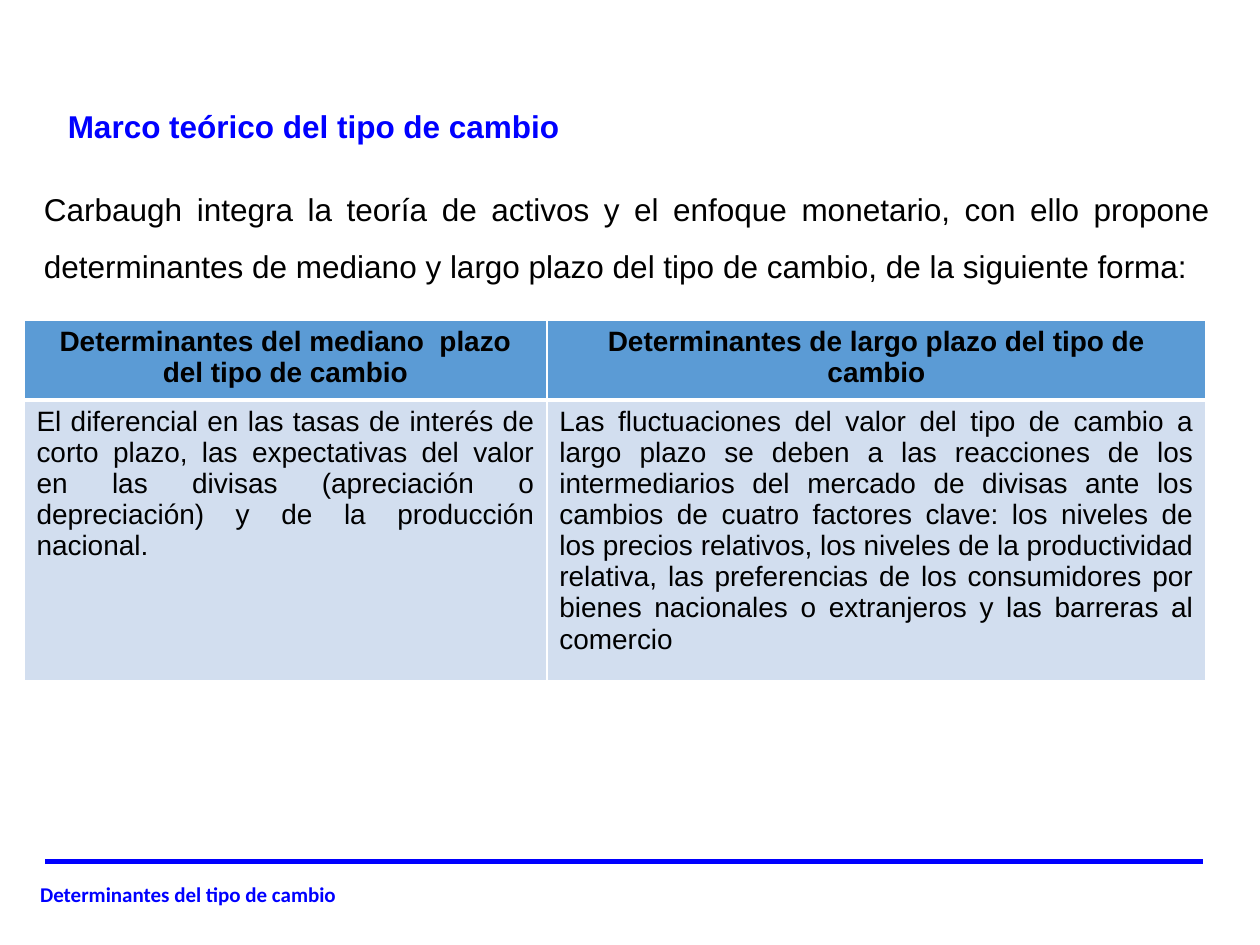
from lxml import etree
from pptx import Presentation
from pptx.dml.color import RGBColor
from pptx.enum.shapes import MSO_CONNECTOR
from pptx.enum.text import PP_ALIGN
from pptx.oxml import parse_xml
from pptx.oxml.ns import nsdecls, qn
from pptx.util import Inches, Pt

LEFT, CENTER, JUST = PP_ALIGN.LEFT, PP_ALIGN.CENTER, PP_ALIGN.JUSTIFY
LINE = MSO_CONNECTOR.STRAIGHT
COLORS = {"blue": "0000FF", "black": "000000", "white": "FFFFFF",
          "head": "5B9BD5", "body": "D2DEEF"}


def write(frame, text, size=18, font="Arial", color="black", bold=False,
          align=LEFT, space=None):
    frame.word_wrap = True
    para = frame.paragraphs[0]
    para.alignment = align
    if space:
        para.line_spacing = space
    run = para.add_run()
    run.text = text
    run.font.size = Pt(size)
    run.font.name = font
    run.font.bold = bold
    run.font.color.rgb = RGBColor.from_string(COLORS[color])


deck = Presentation()
deck.slide_width, deck.slide_height = Inches(10), Inches(7.5)
slide = deck.slides.add_slide(deck.slide_layouts[6])
shapes = slide.shapes

rule = shapes.add_connector(LINE, Inches(0.36), Inches(6.84),
                            Inches(9.55), Inches(6.84))
rule.line.color.rgb = RGBColor.from_string(COLORS["blue"])
rule.line.width = Pt(3)
etree.SubElement(rule._element.spPr, qn("a:effectLst"))

texts = [
    ((0.22, 6.95, 7.14, 0.3), "Determinantes del tipo de cambio",
     dict(size=12, font="Calibri", color="blue", bold=True)),
    ((0.25, 1.31, 9.45, 0.98),
     "Carbaugh integra la teoría de activos y el enfoque monetario, con ello "
     "propone determinantes de mediano y largo plazo del tipo de cambio, de la "
     "siguiente forma:", dict(align=JUST, space=1.5)),
    ((0.44, 0.8, 9.13, 0.4), "Marco teórico del tipo de cambio",
     dict(color="blue", bold=True)),
]
for place, text, style in texts:
    box = shapes.add_textbox(*map(Inches, place))
    write(box.text_frame, text, **style)

rows = [
    ("Determinantes del mediano  plazo del tipo de cambio",
     "Determinantes de largo plazo del tipo de cambio"),
    ("El diferencial en las tasas de interés de corto plazo, las expectativas "
     "del valor en las divisas (apreciación o depreciación) y de la producción "
     "nacional.",
     "Las fluctuaciones del valor del tipo de cambio a largo plazo se deben a "
     "las reacciones de los intermediarios del mercado de divisas ante los "
     "cambios de cuatro factores clave: los niveles de los precios relativos, "
     "los niveles de la productividad relativa, las preferencias de los "
     "consumidores por bienes nacionales o extranjeros y las barreras al "
     "comercio"),
]
looks = [
    ("head", dict(bold=True, align=CENTER), dict(L=1, R=1, T=1, B=3)),
    ("body", dict(align=JUST), dict(L=1, R=1, T=3, B=1)),
]
table = shapes.add_table(2, 2, Inches(0.19), Inches(2.54),
                         Inches(9.38), Inches(2.85)).table
for col, width in zip(table.columns, (4.15, 5.23)):
    col.width = Inches(width)
for row, height in zip(table.rows, (0.62, 2.23)):
    row.height = Inches(height)

for row, texts, (fill, style, edges) in zip(table.rows, rows, looks):
    for cell, text in zip(row.cells, texts):
        write(cell.text_frame, text, size=16, **style)
        cell.fill.solid()
        cell.fill.fore_color.rgb = RGBColor.from_string(COLORS[fill])
        props = cell._tc.get_or_add_tcPr()
        for spot, (side, width) in enumerate(edges.items()):
            props.insert(spot, parse_xml(
                f'<a:ln{side} {nsdecls("a")} w="{Pt(width)}"><a:solidFill>'
                f'<a:srgbClr val="{COLORS["white"]}"/></a:solidFill></a:ln{side}>'))

deck.save("out.pptx")
